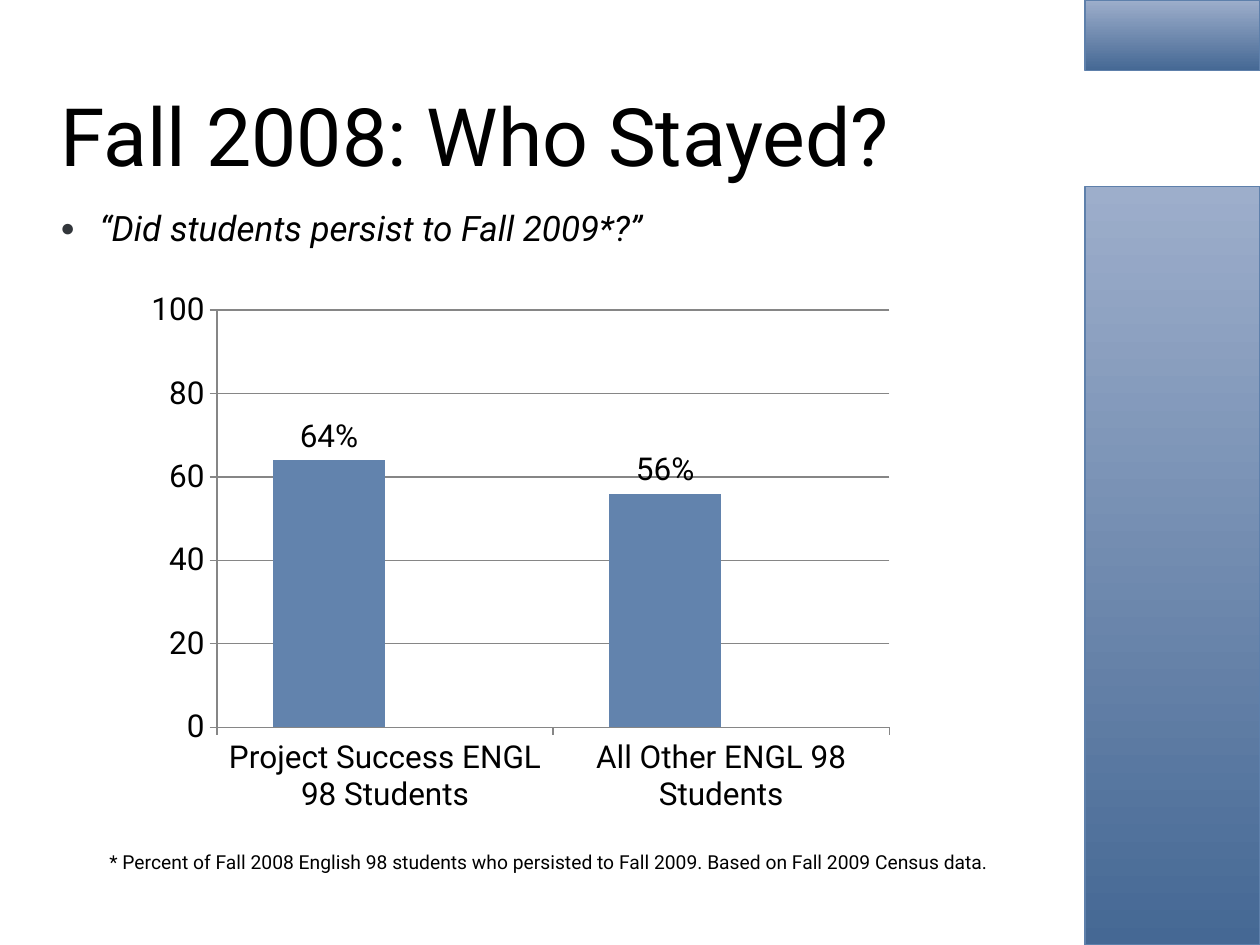
from pptx import Presentation
from pptx.util import Inches, Pt
from pptx.dml.color import RGBColor
from pptx.chart.data import CategoryChartData
from pptx.enum.chart import XL_CHART_TYPE as Kind, XL_LABEL_POSITION as Pos, XL_TICK_MARK as Tick
from pptx.enum.shapes import MSO_SHAPE as Shape
from pptx.enum.text import MSO_ANCHOR as Anchor, MSO_AUTO_SIZE as Fit, PP_ALIGN as Align
from pptx.oxml import parse_xml
from pptx.oxml.ns import nsdecls

HUES = {
    "text": "000000", "bullet": "32363B", "dark": "456894", "light": "9DAECB",
    "edge": "5E80AB", "bar": "6283AD", "spare": "324966", "grid": "868686",
}
FONT = "Roboto"


def hue(name):
    return RGBColor.from_string(HUES[name])


def style(font, size, italic=False):
    font.name = FONT
    font.size = Pt(size)
    font.bold = False
    font.italic = italic
    font.color.rgb = hue("text")


deck = Presentation()
deck.slide_width, deck.slide_height = Inches(10), Inches(7.5)
slide = deck.slides.add_slide(deck.slide_layouts.get_by_name("Title and Content"))

title = slide.shapes.title
title.left, title.top, title.width, title.height = map(Inches, (0.38, 0.53, 7.75, 1.07))
frame = title.text_frame
frame.text = "Fall 2008: Who Stayed?"
frame.vertical_anchor = Anchor.MIDDLE
frame.paragraphs[0].alignment = Align.LEFT
style(frame.paragraphs[0].runs[0].font, 46)

body = slide.placeholders[1]
body.left, body.top, body.width, body.height = map(Inches, (0.38, 1.3, 7.75, 5.4))
frame = body.text_frame
frame.text = "“Did students persist to Fall 2009*?”"
frame.margin_top = Inches(0.34)
para = frame.paragraphs[0]
para.space_before = Pt(0)
props = para._p.get_or_add_pPr()
props.set("marL", str(Inches(0.31)))
props.set("indent", str(-Inches(0.31)))
for xml in (
    f'<a:buClr {nsdecls("a")}><a:srgbClr val="{HUES["bullet"]}"/></a:buClr>',
    f'<a:buSzPct {nsdecls("a")} val="70000"/>',
    f'<a:buChar {nsdecls("a")} char="●"/>',
):
    props.append(parse_xml(xml))
style(para.runs[0].font, 20, italic=True)

for top, height in ((1.48, 6.02), (0, 0.56)):
    band = slide.shapes.add_shape(
        Shape.RECTANGLE, Inches(8.61), Inches(top), Inches(1.39), Inches(height))
    band.shadow.inherit = False
    band.fill.gradient()
    band.fill.gradient_angle = 90
    for stop, name in zip(band.fill.gradient_stops, ("dark", "light")):
        stop.color.rgb = hue(name)
    band.line.color.rgb = hue("edge")
    band.line.width = Pt(1)

data = CategoryChartData(number_format="0")
data.categories = ["Project Success ENGL 98 Students", "All Other ENGL 98 Students"]
data.add_series("Series 1", (64, 56))
data.add_series("Series 2", (None, None))
chart = slide.shapes.add_chart(
    Kind.COLUMN_CLUSTERED, Inches(1.08), Inches(2.23), Inches(6.1), Inches(4.31), data).chart
chart.has_legend = False
chart.has_title = False
style(chart.font, 18)

plot = chart.plots[0]
plot.gap_width = 100
plot.overlap = 0
plot.vary_by_categories = False
for series, name in zip(plot.series, ("bar", "spare")):
    series.format.fill.solid()
    series.format.fill.fore_color.rgb = hue(name)
    labels = series.data_labels
    labels.show_value = True
    labels.position = Pos.OUTSIDE_END
    labels.number_format = '0"%"'
    labels.number_format_is_linked = False

scale = chart.value_axis
scale.minimum_scale, scale.maximum_scale, scale.major_unit = 0, 100, 20
scale.tick_labels.number_format = "0"
scale.tick_labels.number_format_is_linked = False
scale.has_major_gridlines = True
scale.major_gridlines.format.line.color.rgb = hue("grid")
for axis in (scale, chart.category_axis):
    axis.major_tick_mark = Tick.OUTSIDE
    axis.format.line.color.rgb = hue("grid")

note = slide.shapes.add_textbox(Inches(0.77), Inches(6.7), Inches(7.36), Inches(0.29))
frame = note.text_frame
frame.word_wrap = True
frame.auto_size = Fit.SHAPE_TO_FIT_TEXT
frame.text = ("* Percent of Fall 2008 English 98 students who persisted to Fall 2009. "
              "Based on Fall 2009 Census data.")
style(frame.paragraphs[0].runs[0].font, 11)

deck.save("out.pptx")
